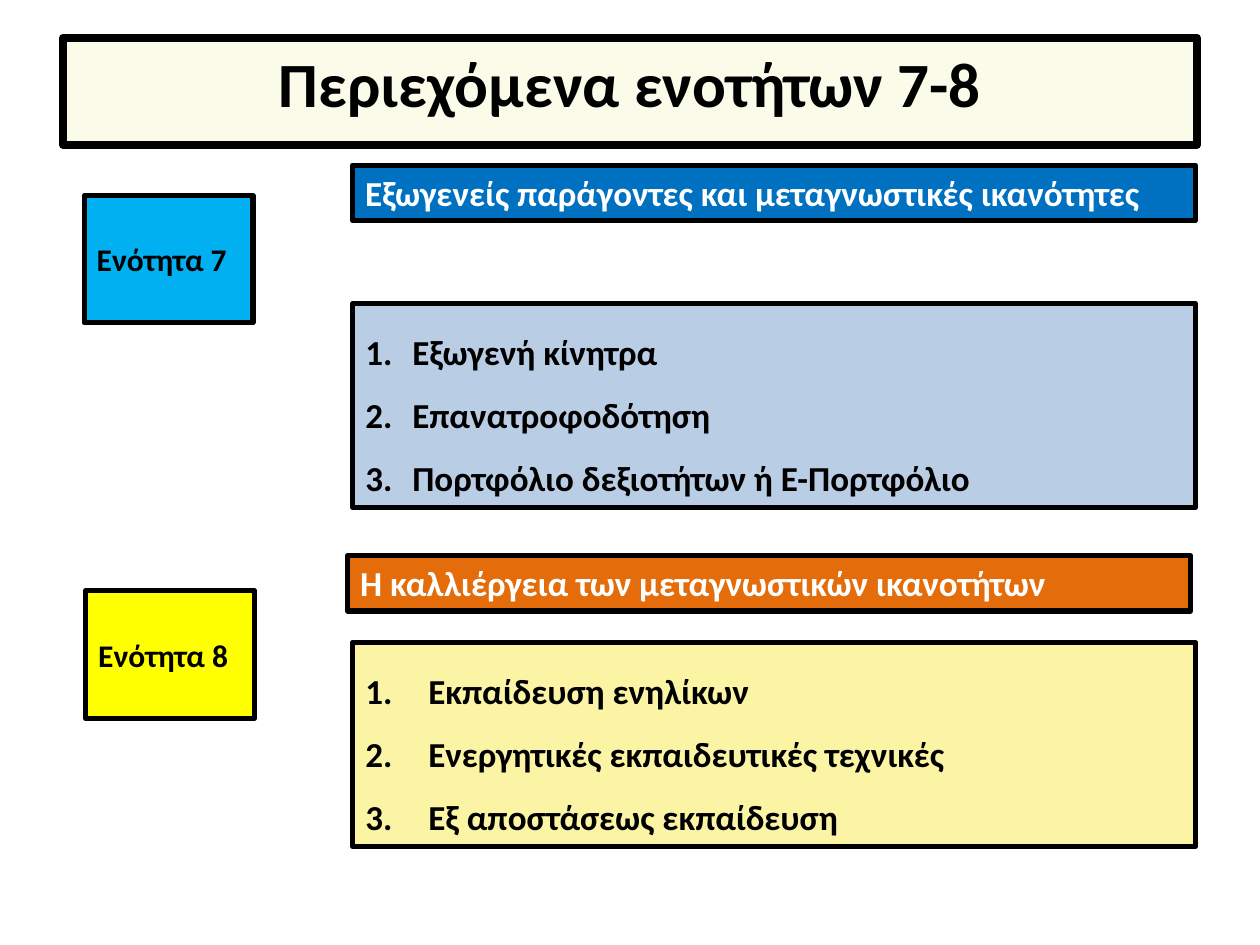
from pptx import Presentation
from pptx.dml.color import RGBColor
from pptx.enum.shapes import MSO_SHAPE
from pptx.enum.text import MSO_ANCHOR, MSO_AUTO_SIZE, PP_ALIGN
from pptx.oxml.ns import qn
from pptx.util import Cm, Pt
from lxml.etree import SubElement

# Content: positions are (left, top) in cm
TITLE = "Περιεχόμενα ενοτήτων 7-8"
UNITS = [
    {
        "label": "Ενότητα 7", "label_at": (1.7, 3.94), "label_fill": "sky",
        "heading": "Εξωγενείς παράγοντες και μεταγνωστικές ικανότητες",
        "heading_at": (7.11, 3.33), "heading_fill": "blue",
        "topics": ["Εξωγενή κίνητρα", "Επανατροφοδότηση",
                   "Πορτφόλιο δεξιοτήτων ή Ε-Πορτφόλιο"],
        "topics_at": (7.11, 6.12), "topics_fill": "pale blue", "indent": 0.95,
    },
    {
        "label": "Ενότητα 8", "label_at": (1.73, 11.91), "label_fill": "yellow",
        "heading": "Η καλλιέργεια των μεταγνωστικών ικανοτήτων",
        "heading_at": (7.01, 11.2), "heading_fill": "orange",
        "topics": ["Εκπαίδευση ενηλίκων", "Ενεργητικές εκπαιδευτικές τεχνικές",
                   "Εξ αποστάσεως εκπαίδευση"],
        "topics_at": (7.11, 12.95), "topics_fill": "pale yellow", "indent": 1.27,
    },
]

COLORS = {
    "black": "000000", "white": "FFFFFF", "cream": "FBFBE9",
    "sky": "00B0F0", "blue": "0070C0", "pale blue": "B9CDE5",
    "yellow": "FFFF00", "orange": "E46C0A", "pale yellow": "FAF4A4",
}
FONT = "Calibri"
TITLE_SIZE = (22.86, 2.16)
LABEL_SIZE = (3.4, 2.57)
HEADING_SIZE = (16.99, 1.12)
TOPICS_SIZE = (16.99, 4.11)


def color(name):
    return RGBColor.from_string(COLORS[name])


def format_box(box, at, size, fill, lines, points, ink="black", border=3,
               align=PP_ALIGN.LEFT, anchor=MSO_ANCHOR.TOP):
    """Place a box, fill and outline it, and write its bold lines."""
    box.left, box.top = map(Cm, at)
    box.width, box.height = map(Cm, size)
    box.fill.solid()
    box.fill.fore_color.rgb = color(fill)
    box.line.color.rgb = color("black")
    box.line.width = Pt(border)
    frame = box.text_frame
    frame.text = "\n".join(lines)
    frame.word_wrap = True
    frame.auto_size = MSO_AUTO_SIZE.NONE
    frame.vertical_anchor = anchor
    for paragraph in frame.paragraphs:
        paragraph.alignment = align
        for run in paragraph.runs:
            run.font.name = FONT
            run.font.size = Pt(points)
            run.font.bold = True
            run.font.color.rgb = color(ink)


def number_lines(box, indent):
    """Number the paragraphs with a hanging indent."""
    for paragraph in box.text_frame.paragraphs:
        properties = paragraph._p.get_or_add_pPr()
        properties.set("marL", str(Cm(indent)))
        properties.set("indent", str(-Cm(indent)))
        SubElement(properties, qn("a:buAutoNum"), type="arabicPeriod")
        paragraph.line_spacing = 1.5
        paragraph.space_before = Pt(0)


def add_box(slide):
    box = slide.shapes.add_shape(MSO_SHAPE.RECTANGLE, 0, 0, 0, 0)
    box.shadow.inherit = False
    return box


def main():
    deck = Presentation()
    deck.slide_width, deck.slide_height = Cm(25.4), Cm(19.05)
    slide = deck.slides.add_slide(deck.slide_layouts.get_by_name("Two Content"))
    title, *topic_boxes = slide.placeholders

    # Title
    format_box(title, (1.27, 0.76), TITLE_SIZE, "cream", [TITLE], 36,
               border=4.5, align=PP_ALIGN.CENTER)

    # Units: label, heading and numbered topics
    for unit, topics in zip(UNITS, topic_boxes):
        format_box(add_box(slide), unit["label_at"], LABEL_SIZE,
                   unit["label_fill"], [unit["label"]], 18,
                   anchor=MSO_ANCHOR.MIDDLE)
        format_box(add_box(slide), unit["heading_at"], HEADING_SIZE,
                   unit["heading_fill"], [unit["heading"]], 20, ink="white")
        format_box(topics, unit["topics_at"], TOPICS_SIZE,
                   unit["topics_fill"], unit["topics"], 20)
        number_lines(topics, unit["indent"])

    deck.save("out.pptx")


if __name__ == "__main__":
    main()
